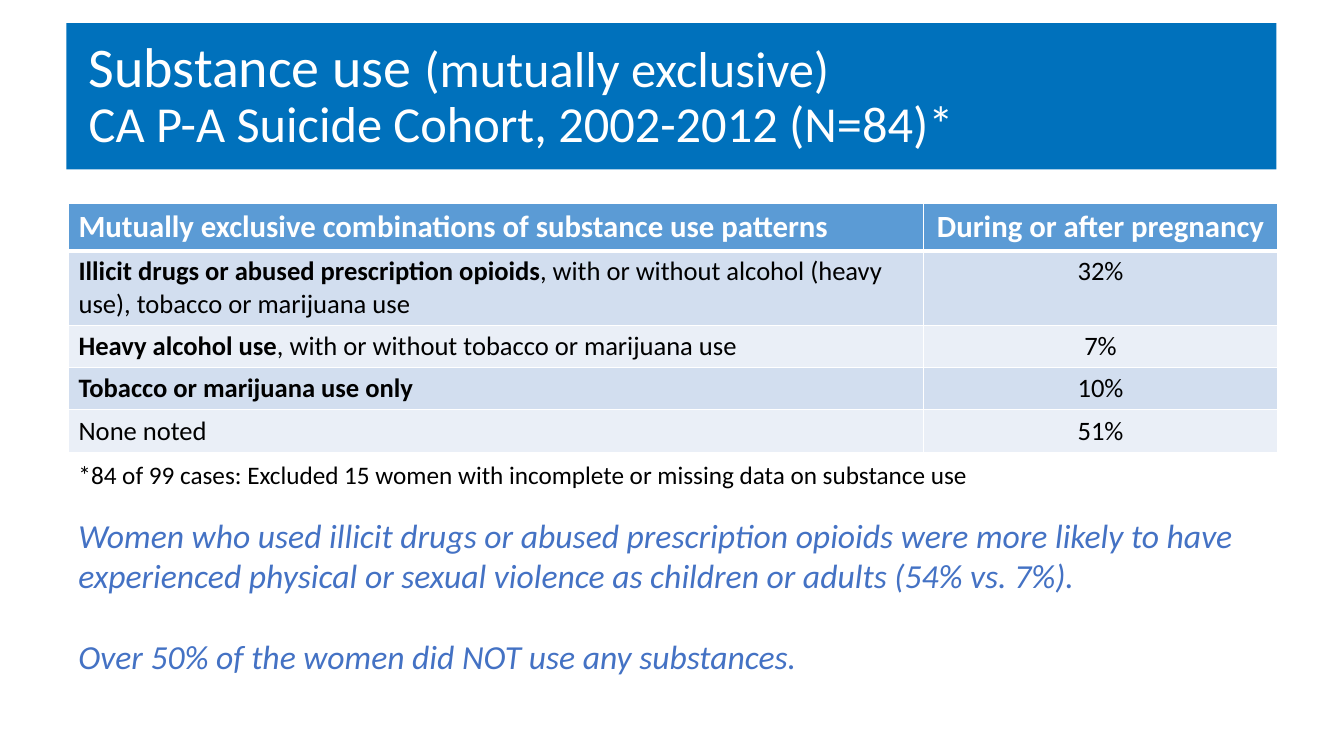
from lxml.etree import SubElement
from pptx import Presentation
from pptx.dml.color import RGBColor
from pptx.enum.text import MSO_ANCHOR, PP_ALIGN
from pptx.oxml.ns import qn
from pptx.util import Inches, Pt

WIDTH, HEIGHT = 13.33, 7.5
LEFT, CONTENT_WIDTH = 0.68, 11.99
FONT = "Calibri"
WHITE, BLACK = "FFFFFF", "000000"
TITLE_BLUE, HEADER_BLUE, NOTE_BLUE = "0071BC", "5B9BD5", "4472C4"
BANDS = ["D2DEEF", "EAEFF7"]
COLUMN_WIDTHS = [8.48, 3.51]
ROW_HEIGHTS = [0.46, 0.74, 0.42, 0.42, 0.42]

# Each row: bold lead, plain rest, share of women
PATTERNS = [
    ("Illicit drugs or abused prescription opioids",
     ", with or without alcohol (heavy use), tobacco or marijuana use", "32%"),
    ("Heavy alcohol use", ", with or without tobacco or marijuana use", "7%"),
    ("Tobacco or marijuana use only", "", "10%"),
    ("", "None noted", "51%"),
]
FINDINGS = [
    "Women who used illicit drugs or abused prescription opioids were more likely "
    "to have experienced physical or sexual violence as children or adults (54% vs. 7%).",
    "Over 50% of the women did NOT use any substances.",
]


def color(value):
    return RGBColor.from_string(value)


def add_run(paragraph, text, font_color, **formats):
    run = paragraph.add_run()
    run.text = text
    run.font.color.rgb = color(font_color)
    for name, value in {"name": FONT, **formats}.items():
        setattr(run.font, name, value)


def add_text(slide, top, height, lines, font_color, gap=0, **formats):
    box = slide.shapes.add_textbox(Inches(LEFT), Inches(top), Inches(CONTENT_WIDTH), Inches(height))
    frame = box.text_frame
    frame.word_wrap = True
    for index, line in enumerate(lines):
        paragraph = frame.add_paragraph() if index else frame.paragraphs[0]
        if index:
            paragraph.space_before = Pt(gap)
        add_run(paragraph, line, font_color, **formats)


def add_title(slide):
    banner = slide.shapes.add_textbox(Inches(0.66), Inches(0.23), Inches(12), Inches(1.45))
    banner.fill.solid()
    banner.fill.fore_color.rgb = color(TITLE_BLUE)
    frame = banner.text_frame
    frame.word_wrap = True
    frame.vertical_anchor = MSO_ANCHOR.MIDDLE
    frame.margin_left = Inches(0.22)
    paragraph = frame.paragraphs[0]
    paragraph.line_spacing = 0.9
    add_run(paragraph, "Substance use ", WHITE, size=Pt(40))
    add_run(paragraph, "(mutually exclusive) ", WHITE, size=Pt(36))
    paragraph.add_line_break()
    add_run(paragraph, "CA P-A Suicide Cohort, 2002-2012 (N=84)*", WHITE, size=Pt(36))


def style_cell(cell, fill, bottom_width):
    properties = cell._tc.get_or_add_tcPr()
    widths = {"a:lnL": 1, "a:lnR": 1, "a:lnT": 1, "a:lnB": bottom_width}
    for tag, width in widths.items():
        line = SubElement(properties, qn(tag), w=str(Pt(width)))
        SubElement(SubElement(line, qn("a:solidFill")), qn("a:srgbClr"), val=WHITE)
    cell.fill.solid()
    cell.fill.fore_color.rgb = color(fill)


def add_pattern_table(slide):
    table = slide.shapes.add_table(
        len(ROW_HEIGHTS), len(COLUMN_WIDTHS), Inches(LEFT), Inches(2.02),
        Inches(CONTENT_WIDTH), Inches(sum(ROW_HEIGHTS))).table
    for column, width in zip(table.columns, COLUMN_WIDTHS):
        column.width = Inches(width)
    for row, height in zip(table.rows, ROW_HEIGHTS):
        row.height = Inches(height)

    rows = [[("Mutually exclusive combinations of substance use patterns", ""),
             ("During or after pregnancy", "")]]
    rows += [[(lead, rest), ("", share)] for lead, rest, share in PATTERNS]
    for row_index, row in enumerate(rows):
        is_header = row_index == 0
        fill = HEADER_BLUE if is_header else BANDS[(row_index - 1) % 2]
        font_color, size = (WHITE, 22) if is_header else (BLACK, 19)
        for column_index, (bold_text, plain_text) in enumerate(row):
            cell = table.cell(row_index, column_index)
            style_cell(cell, fill, 3 if is_header else 1)
            paragraph = cell.text_frame.paragraphs[0]
            paragraph.alignment = PP_ALIGN.CENTER if column_index else PP_ALIGN.LEFT
            for text, bold in ((bold_text, True), (plain_text, False)):
                if text:
                    add_run(paragraph, text, font_color, size=Pt(size), bold=bold)


def main():
    presentation = Presentation()
    presentation.slide_width, presentation.slide_height = Inches(WIDTH), Inches(HEIGHT)
    slide = presentation.slides.add_slide(presentation.slide_layouts[6])
    add_title(slide)
    add_pattern_table(slide)
    # Findings, then the footnote of the table
    add_text(slide, 5.06, 1.72, FINDINGS, NOTE_BLUE, gap=29, size=Pt(24), italic=True)
    add_text(slide, 4.51, 0.4,
             ["*84 of 99 cases: Excluded 15 women with incomplete or missing data on substance use"],
             BLACK, size=Pt(18))
    presentation.save("out.pptx")


if __name__ == "__main__":
    main()
